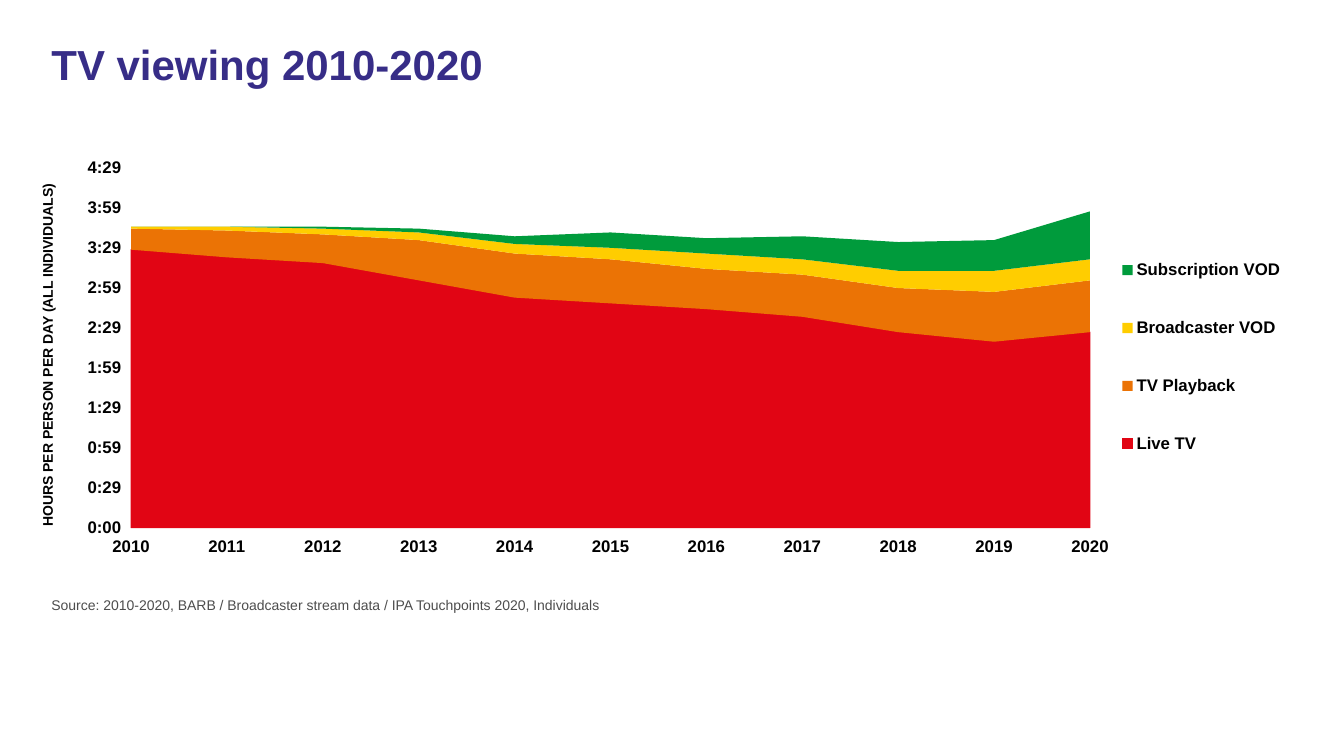
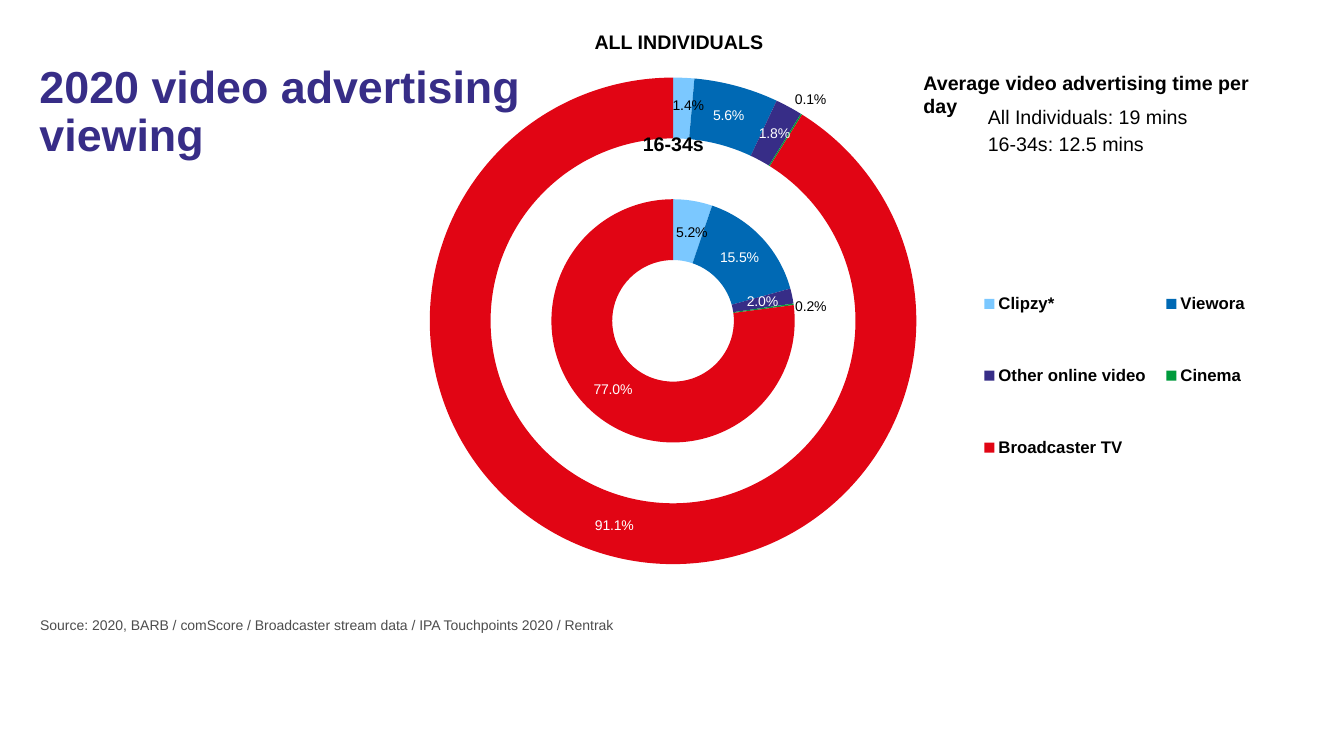
from lxml import etree
from pptx import Presentation
from pptx.chart.data import CategoryChartData
from pptx.dml.color import RGBColor
from pptx.enum.chart import XL_CHART_TYPE, XL_LEGEND_POSITION, XL_TICK_MARK
from pptx.enum.text import MSO_ANCHOR, MSO_AUTO_SIZE, PP_ALIGN
from pptx.oxml.ns import qn
from pptx.util import Pt

AREA, DOUGHNUT = XL_CHART_TYPE.AREA_STACKED, XL_CHART_TYPE.DOUGHNUT
LEGEND_RIGHT = XL_LEGEND_POSITION.RIGHT
TICK_OUT = XL_TICK_MARK.OUTSIDE
LEFT, CENTER = PP_ALIGN.LEFT, PP_ALIGN.CENTER
TOP = MSO_ANCHOR.TOP
FIT_SHAPE, NO_FIT = MSO_AUTO_SIZE.SHAPE_TO_FIT_TEXT, MSO_AUTO_SIZE.NONE

FONT = "Arial"
COLORS = {
    "black": "000000", "white": "FFFFFF", "grey": "4D4D4D", "purple": "372D87",
    "red": "E10514", "orange": "EB7305", "yellow": "FFCD00", "green": "009B3C",
    "sky": "7BC8FF", "blue": "0069B4",
}
LABEL_FORMAT = '0.0"%"'

YEARS = [str(year) for year in range(2010, 2021)]
VIEWING = [
    ("Live TV", "red",
     [0.145, 0.141, 0.138, 0.129, 0.12, 0.117, 0.114, 0.11, 0.102, 0.097, 0.102]),
    ("TV Playback", "orange",
     [0.011, 0.014, 0.015, 0.021, 0.023, 0.023, 0.021, 0.022, 0.023, 0.026, 0.027]),
    ("Broadcaster VOD", "yellow",
     [0.001, 0.002, 0.003, 0.004, 0.005, 0.006, 0.008, 0.008, 0.009, 0.011, 0.011]),
    ("Subscription VOD", "green",
     [0, 0, 0.001, 0.002, 0.004, 0.008, 0.008, 0.012, 0.015, 0.016, 0.025]),
]
HALF_HOUR = 1 / 48
# The axis step falls just short of half an hour, so labels read 0:29, 0:59, ...
AXIS_STEP = 0.020833

MEDIA = {"Clipzy*": "sky", "Viewora": "blue", "Other online video": "purple",
         "Cinema": "green", "Broadcaster TV": "red"}
# The empty middle ring separates the two audiences
RINGS = [
    ("Series 1", [5.2, 15.5, 2, 0.2, 77]),
    ("Series 2", [None] * len(MEDIA)),
    ("Series 3", [1.4, 5.6, 1.8, 0.1, 91.1]),
]
# Ring -> slice -> shift of its black label, as a share of the chart
BLACK_LABELS = {
    "Series 1": {0: (0.004, 0.003), 3: (0.049, -0.003)},
    "Series 3": {0: (0.006, -0.004), 3: (0.026, -0.066)},
}


def rgb(color):
    return RGBColor.from_string(COLORS[color])


def style_font(font, size, color="black", bold=False):
    font.name, font.size, font.bold = FONT, Pt(size), bold
    font.color.rgb = rgb(color)


def write(frame, text, size=14, color="black", bold=False, align=LEFT, spacing=1.0):
    frame.word_wrap = True
    frame.vertical_anchor = TOP
    paragraph = frame.paragraphs[0]
    paragraph.alignment = align
    paragraph.line_spacing = spacing
    paragraph.space_before = Pt(0)
    run = paragraph.add_run()
    run.text = text
    style_font(run.font, size, color, bold)


def set_layout(parent, index, target=None, mode=None, **place):
    """Give a chart part a manual place, in shares of the chart."""
    for old in parent.findall(qn("c:layout")):
        parent.remove(old)
    layout = etree.Element(qn("c:layout"))
    parent.insert(index, layout)
    manual = etree.SubElement(layout, qn("c:manualLayout"))
    settings = {"layoutTarget": target, "xMode": mode, "yMode": mode, **place}
    for tag, value in settings.items():
        if value is not None:
            etree.SubElement(manual, qn(f"c:{tag}")).set("val", str(value))


class Deck:
    def __init__(self):
        self.prs = Presentation()
        self.prs.slide_width, self.prs.slide_height = Pt(960), Pt(540)
        self.slide = None

    def new_slide(self):
        self.slide = self.prs.slides.add_slide(self.prs.slide_layouts[1])

    def place(self, holder, left, top, width, height):
        holder.left, holder.top = Pt(left), Pt(top)
        holder.width, holder.height = Pt(width), Pt(height)
        holder.text_frame.auto_size = NO_FIT
        return holder.text_frame

    def title(self, text, left, top, width, height, size):
        frame = self.place(self.slide.shapes.title, left, top, width, height)
        write(frame, text, size=size, color="purple", bold=True, spacing=0.9)

    def source(self, text, left, top):
        frame = self.place(self.slide.placeholders[1], left, top, 893, 24)
        properties = frame.paragraphs[0]._p.get_or_add_pPr()
        properties.set("marL", "0")
        properties.set("indent", "0")
        etree.SubElement(properties, qn("a:buNone"))
        write(frame, text, size=10, color="grey")

    def text(self, text, left, top, width, height=24.5, rotation=0, **style):
        box = self.slide.shapes.add_textbox(Pt(left), Pt(top), Pt(width), Pt(height))
        box.rotation = rotation
        write(box.text_frame, text, **style)
        box.text_frame.auto_size = FIT_SHAPE

    def chart(self, kind, categories, series, box, plot, legend, size, overlay=False):
        data = CategoryChartData()
        data.categories = categories
        for name, values in series:
            data.add_series(name, values)
        frame = self.slide.shapes.add_chart(kind, *map(Pt, box), data)
        chart = frame.chart
        chart.has_title = False
        style_font(chart.font, size)
        chart.has_legend = True
        chart.legend.position = LEGEND_RIGHT
        chart.legend.include_in_layout = overlay
        style_font(chart.legend.font, 12, bold=True)
        set_layout(chart.legend._element, 1, mode="edge", **legend)
        plot_area = chart._chartSpace.chart.plotArea
        set_layout(plot_area, 0, target="inner", mode="edge", **plot)
        return chart

    def area_chart(self, categories, bands, **layout):
        series = [(name, values) for name, _, values in bands]
        chart = self.chart(AREA, categories, series, size=12, overlay=True, **layout)
        chart.plots[0].vary_by_categories = False
        for band, (_, color, _) in zip(chart.plots[0].series, bands):
            band.format.fill.solid()
            band.format.fill.fore_color.rgb = rgb(color)
        live_line = chart.plots[0].series[0].format.line
        live_line.color.rgb = rgb(bands[0][1])
        live_line.width = Pt(0.75)
        for axis in (chart.category_axis, chart.value_axis):
            axis.has_major_gridlines = False
            axis.major_tick_mark = TICK_OUT
            axis.format.line.fill.background()
            style_font(axis.tick_labels.font, 12, bold=True)
        hours = chart.value_axis
        hours.minimum_scale, hours.maximum_scale = 0, 9 * HALF_HOUR
        hours.major_unit = AXIS_STEP
        hours.tick_labels.number_format = "h:mm"
        hours.tick_labels.number_format_is_linked = False
        hours._element.find(qn("c:crossBetween")).set("val", "midCat")

    def doughnut_chart(self, slices, rings, black_labels, **layout):
        chart = self.chart(DOUGHNUT, list(slices), rings, size=18, **layout)
        plot = chart.plots[0]
        plot.vary_by_categories = True
        plot._element.find(qn("c:holeSize")).set("val", "47")
        for ring in plot.series:
            for index, color in enumerate(slices.values()):
                fill = ring.points[index].format.fill
                fill.solid()
                fill.fore_color.rgb = rgb(color)
            if ring.name in black_labels:
                self.ring_labels(ring, black_labels[ring.name])

    def ring_labels(self, ring, shifts):
        labels = ring.data_labels
        labels.show_value = True
        labels.number_format = LABEL_FORMAT
        labels.number_format_is_linked = False
        style_font(labels.font, 10, "white")
        for index in shifts:
            style_font(ring.points[index].data_label.font, 10)
        for label, (x, y) in zip(ring._element.iter(qn("c:dLbl")), shifts.values()):
            set_layout(label, 1, x=x, y=y)
            number_format = etree.Element(
                qn("c:numFmt"), formatCode=LABEL_FORMAT, sourceLinked="0")
            label.insert(2, number_format)


def viewing_slide(deck):
    deck.new_slide()
    deck.title("TV viewing 2010-2020", 29.5, 28, 893, 80.5, size=30)
    deck.source("Source: 2010-2020, BARB / Broadcaster stream data / "
                "IPA Touchpoints 2020, Individuals", 29.5, 422.5)
    deck.area_chart(YEARS, VIEWING, box=(26, 77, 914.5, 337.5),
                    plot=dict(x=0.074, y=0.128, w=0.749, h=0.761),
                    legend=dict(x=0.835, y=0.24, w=0.15, h=0.575))
    deck.text("HOURS PER PERSON PER DAY (ALL INDIVIDUALS)", -103.5, 236, 275, 19.5,
              rotation=270, size=10, bold=True)


def advertising_slide(deck):
    deck.new_slide()
    deck.title("2020 video advertising viewing", 21, 42.5, 364.5, 198.5, size=32)
    deck.source("Source: 2020, BARB / comScore / Broadcaster stream data / "
                "IPA Touchpoints 2020 / Rentrak", 21.5, 437)
    deck.doughnut_chart(MEDIA, RINGS, BLACK_LABELS, box=(231, 10, 691, 438),
                        plot=dict(x=0.11, y=0.095, w=0.503, h=0.811),
                        legend=dict(x=0.668, y=0.37, w=0.3, h=0.44))
    deck.text("Average video advertising time per day", 652.5, 47, 275, bold=True)
    deck.text("All Individuals: 19 mins", 698.5, 71.5, 215)
    deck.text("16-34s: 12.5 mins", 698.5, 90.5, 182)
    deck.text("ALL INDIVIDUALS", 415.5, 17.5, 139, bold=True, align=CENTER)
    deck.text("16-34s", 438.5, 90.5, 85, bold=True, align=CENTER)


def main():
    deck = Deck()
    viewing_slide(deck)
    advertising_slide(deck)
    deck.prs.save("out.pptx")


if __name__ == "__main__":
    main()
